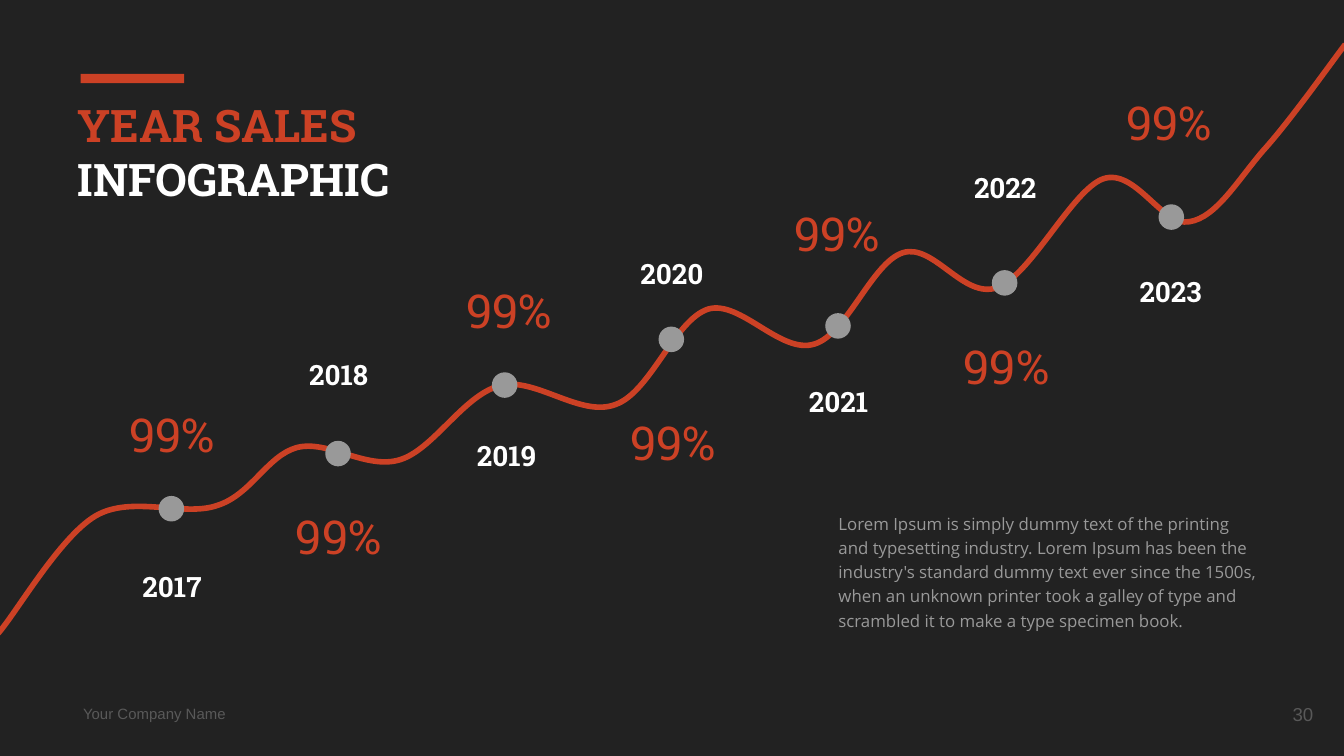
from pptx import Presentation
from pptx.dml.color import RGBColor
from pptx.enum.shapes import MSO_SHAPE
from pptx.enum.text import MSO_ANCHOR, MSO_AUTO_SIZE, PP_ALIGN
from pptx.oxml.ns import qn
from pptx.oxml.xmlchemy import OxmlElement
from pptx.util import Pt

PX = 9144  # 100 px to the inch
C = {"bg": "222222", "accent": "CC4125", "white": "FFFFFF",
     "gray": "999999", "dim": "595959"}
SLAB, SANS, ARIAL = "Roboto Slab", "Open Sans", "Arial"

# Curve: start point, then two controls and an end point per segment
CURVE = [
    (-2, 472),
    (11, 458), (44, 400), (71, 384), (98, 368), (137, 385), (162, 376),
    (187, 368), (199, 339), (221, 333), (244, 327), (273, 350), (298, 342),
    (323, 334), (345, 294), (372, 287), (398, 280), (432, 311), (458, 301),
    (484, 292), (502, 238), (527, 230), (551, 223), (581, 264), (606, 256),
    (630, 249), (649, 195), (672, 188), (695, 181), (717, 223), (742, 214),
    (767, 205), (798, 141), (821, 133), (845, 125), (865, 169), (885, 165),
    (905, 162), (921, 134), (940, 112), (960, 90), (991, 46), (1001, 33),
]
# Year, dot top, then (left, top) of the year and of the value
MILESTONES = [
    ("2017", 369, (76, 424), (76, 301)),
    ("2018", 328, (200, 266), (200, 377)),
    ("2019", 277, (325, 326), (327, 209)),
    ("2020", 243, (448, 191), (449, 307)),
    ("2021", 233, (572, 286), (571, 152)),
    ("2022", 201, (696, 127), (697, 251)),
    ("2023", 152, (819, 204), (818, 69)),
]
LOREM = ("Lorem Ipsum is simply dummy text of the printing and typesetting "
         "industry. Lorem Ipsum has been the industry's standard dummy text "
         "ever since the 1500s, when an unknown printer took a galley of type "
         "and scrambled it to make a type specimen book.")


def emu(*px):
    return [v * PX for v in px]


def rgb(name):
    return RGBColor.from_string(C[name])


def set_frame(tf, anchor):
    tf.word_wrap = True
    tf.auto_size = MSO_AUTO_SIZE.NONE
    tf.vertical_anchor = anchor
    tf.margin_left = tf.margin_right = tf.margin_top = tf.margin_bottom = 10 * PX


def set_font(font, size, name, color=None, bold=False):
    font.size, font.name, font.bold = Pt(size), name, bold
    if color:
        font.color.rgb = rgb(color)


def add_text(s, box, text, size, name, color, bold=False,
             align=PP_ALIGN.LEFT, anchor=MSO_ANCHOR.MIDDLE):
    tf = s.shapes.add_textbox(*emu(*box)).text_frame
    set_frame(tf, anchor)
    p = tf.paragraphs[0]
    p.text, p.alignment = text, align
    set_font(p.font, size, name, color, bold)
    return p


def add_solid(s, kind, box, color):
    sp = s.shapes.add_shape(kind, *emu(*box))
    sp.shadow.inherit = False
    sp.fill.solid()
    sp.fill.fore_color.rgb = rgb(color)
    sp.line.fill.background()


def add_heading(s, x, y, w, h):
    add_solid(s, MSO_SHAPE.RECTANGLE, (x + 12, y - 8, 77, 7), "accent")
    title = s.shapes.title
    title.left, title.top, title.width, title.height = emu(x, y, w, h)
    set_frame(title.text_frame, MSO_ANCHOR.TOP)
    p = title.text_frame.paragraphs[0]
    p.alignment = PP_ALIGN.LEFT
    set_font(p.font, 24, SLAB, bold=True)
    for text, color in (("YEAR SALES ", "accent"), ("INFOGRAPHIC", "white")):
        r = p.add_run()
        r.text = text
        r.font.color.rgb = rgb(color)


def add_curve(s, points):
    fb = s.shapes.build_freeform(*points[0], scale=PX)
    fb.add_line_segments(points[1:], close=False)
    sp = fb.convert_to_shape()
    sp.shadow.inherit = False
    sp.fill.background()
    sp.line.color.rgb = rgb("accent")
    sp.line.width = Pt(3)
    # Turn every three line steps into one cubic segment
    steps = list(sp._element.iter(qn("a:lnTo")))
    for i in range(0, len(steps), 3):
        cubic = OxmlElement("a:cubicBezTo")
        steps[i].addprevious(cubic)
        for step in steps[i:i + 3]:
            cubic.append(step[0])
            step.getparent().remove(step)


def add_timeline(s, x, y):
    add_curve(s, [(x + px, y + py) for px, py in CURVE])
    for i, (year, top, year_at, value_at) in enumerate(MILESTONES):
        add_solid(s, MSO_SHAPE.OVAL, (x + 118 + 124 * i, y + top, 19, 19), "gray")
        for (left, t), h, text, size, color, bold in (
                (year_at, 25, year, 15, "white", True),
                (value_at, 43, "99%", 25, "accent", False)):
            add_text(s, (x + left, y + t, 104, h), text, size, SLAB, color,
                     bold, PP_ALIGN.CENTER)


def add_note(s, *box):
    p = add_text(s, box, LOREM, 9, SANS, "gray", anchor=MSO_ANCHOR.TOP)
    p.line_spacing = 1.2


def add_footer(s, x, y, w, h):
    add_text(s, (x, y + 8, 167, 26), "Your Company Name", 8, ARIAL, "dim")
    add_text(s, (x + w - 60, y, 60, h), "30", 10, ARIAL, "dim",
             align=PP_ALIGN.RIGHT)


def main():
    prs = Presentation()
    prs.slide_width = 1000 * PX
    prs.slide_height = prs.slide_width * 9 // 16
    s = prs.slides.add_slide(prs.slide_layouts[5])  # Title Only
    s.background.fill.solid()
    s.background.fill.fore_color.rgb = rgb("bg")
    add_heading(s, 48, 63, 451, 116)
    add_timeline(s, 0, 0)
    add_note(s, 614, 369, 332, 109)
    add_footer(s, 52, 510, 935, 43)
    prs.save("out.pptx")


if __name__ == "__main__":
    main()
